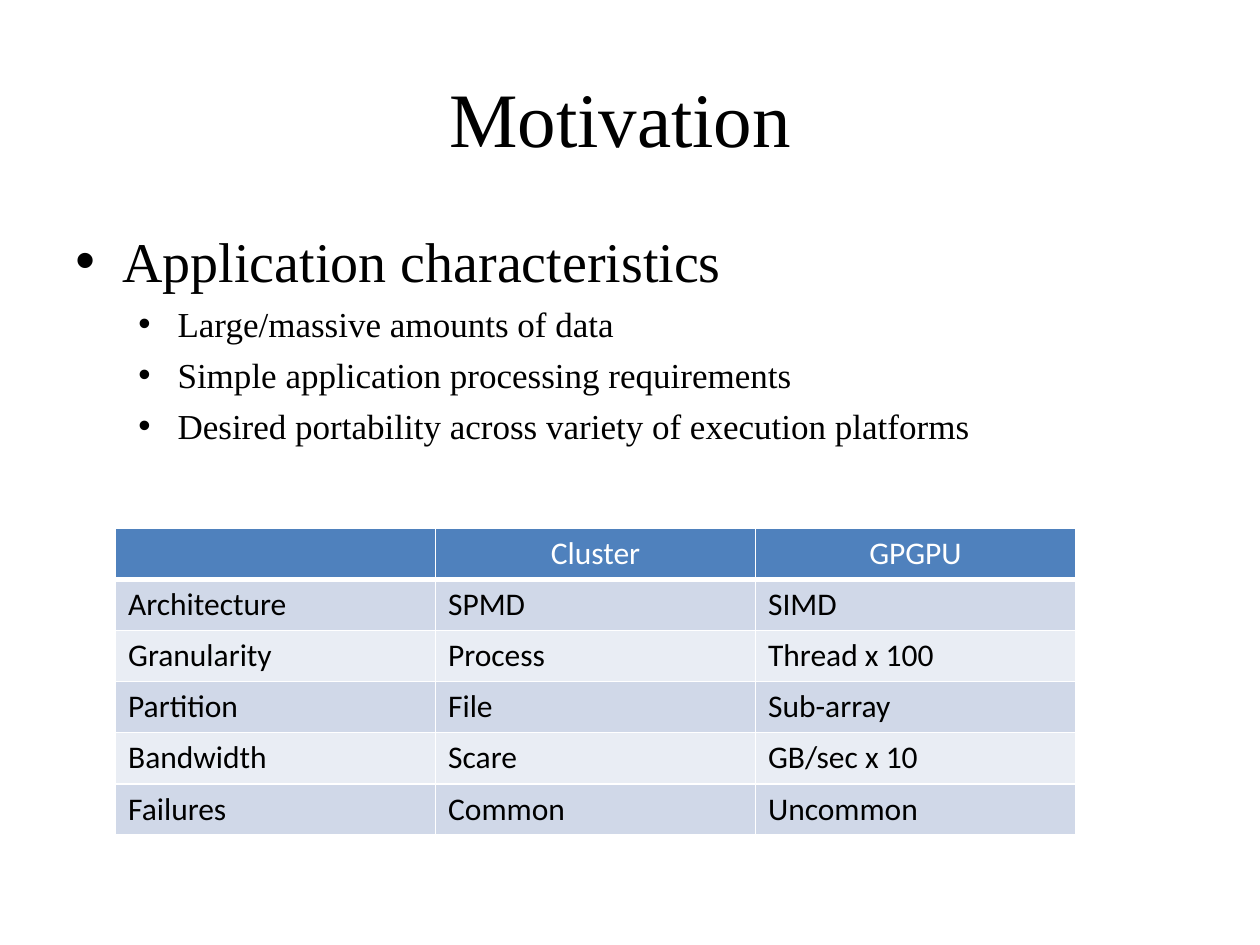
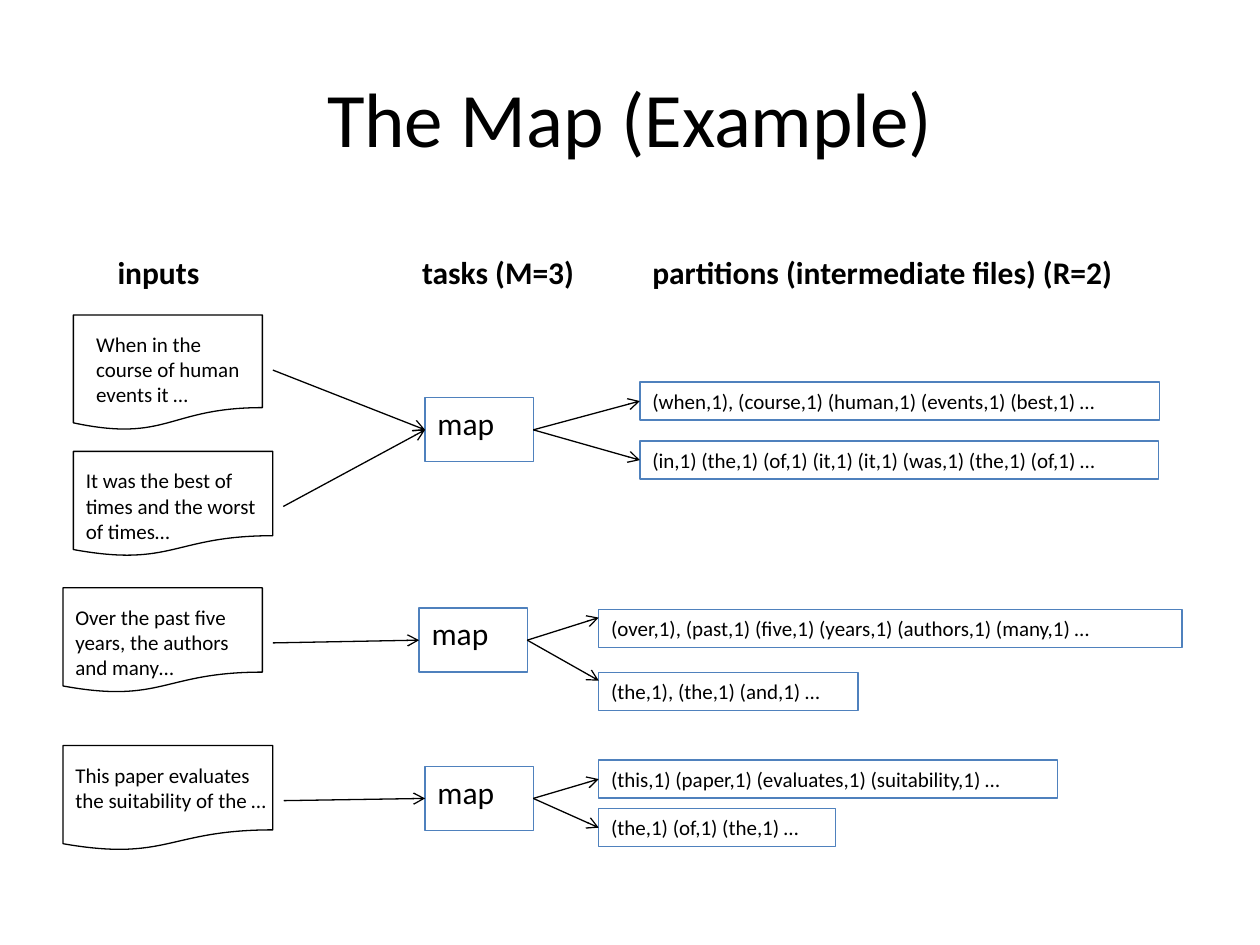
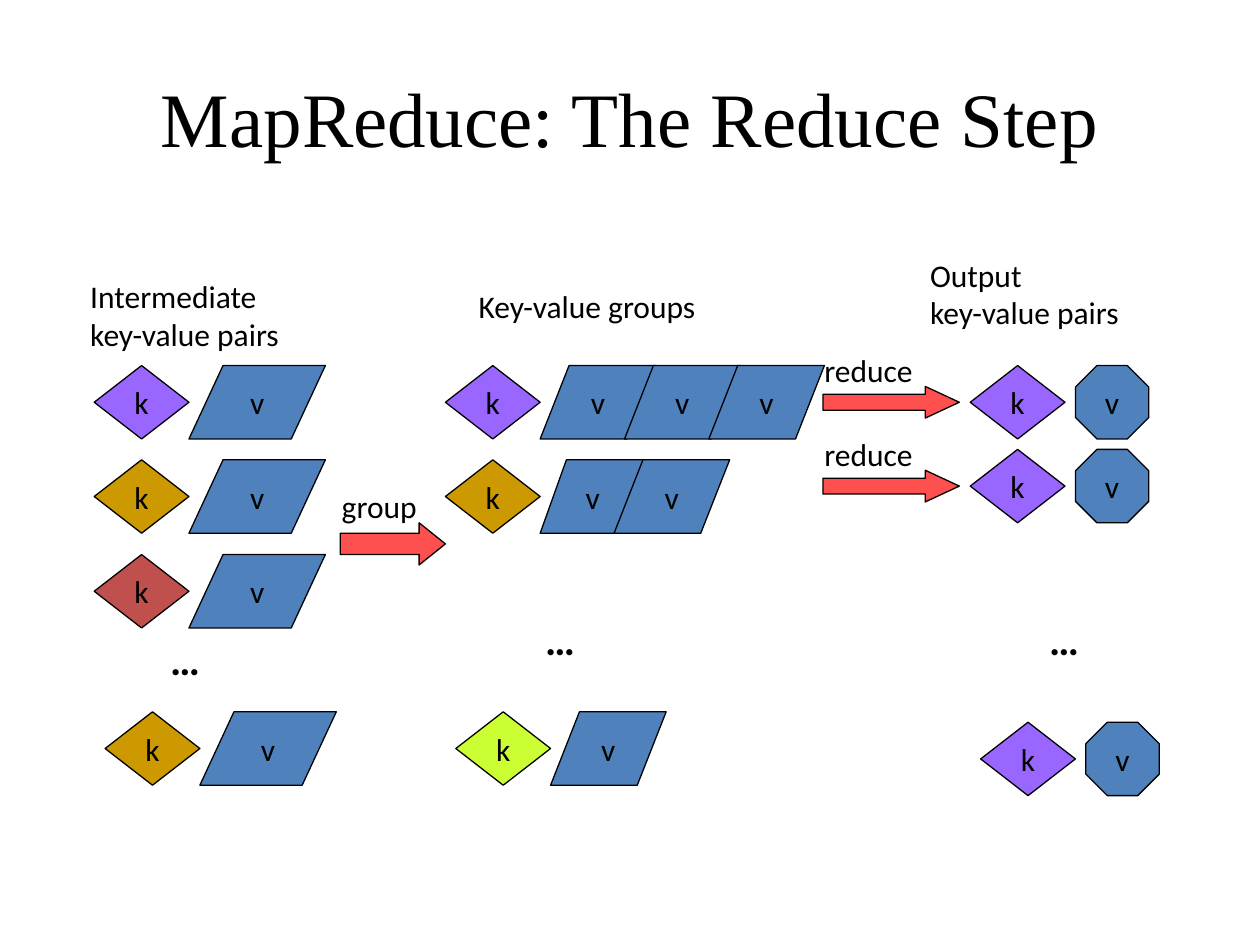
import pptx
import pptx.dml.color
import pptx.enum.shapes
import pptx.enum.text
import pptx.oxml
import pptx.oxml.ns
import pptx.util
from dataclasses import dataclass

Cm = pptx.util.Cm
Pt = pptx.util.Pt
SHAPE = pptx.enum.shapes.MSO_SHAPE
ALIGN = pptx.enum.text.PP_ALIGN
ANCHOR = pptx.enum.text.MSO_ANCHOR
TOP, LEFT, BOTTOM, RIGHT = range(4)


@dataclass(frozen=True)
class Theme:
    sans: str = "Calibri"
    serif: str = "Times New Roman"
    black: str = "000000"
    white: str = "FFFFFF"
    blue: str = "4F81BD"
    band_dark: str = "D0D8E8"
    band_light: str = "E9EDF4"
    purple: str = "9966FF"
    ochre: str = "CC9900"
    brick: str = "C0504D"
    lime: str = "CCFF33"
    red: str = "FF5050"
    title: int = 44
    topic: int = 32
    ellipsis: int = 24
    point: int = 20
    label: int = 18
    data: int = 12
    outline: float = 0.75


THEME = Theme()


def rgb(color):
    return pptx.dml.color.RGBColor.from_string(color)


def xml(markup):
    """Parse one drawing element whose tag carries the {ns} mark."""
    return pptx.oxml.parse_xml(markup.replace("{ns}", pptx.oxml.ns.nsdecls("a")))


def write(frame, text, size=THEME.label, font=THEME.sans, color=THEME.black,
          bold=False, align=ALIGN.LEFT, anchor=ANCHOR.TOP, wrap=True):
    """Fill a text frame, one paragraph for each line of text."""
    frame.word_wrap = wrap
    frame.vertical_anchor = anchor
    frame.text = text
    for paragraph in frame.paragraphs:
        paragraph.alignment = align
        paragraph.font.size = Pt(size)
        for run in paragraph.runs:
            run.font.size = Pt(size)
            run.font.name = font
            run.font.bold = bold
            run.font.color.rgb = rgb(color)


class Deck:
    """Presentation style together with the slide being filled; lengths are in cm."""

    def __init__(self, theme):
        self.theme = theme
        self.presentation = pptx.Presentation()
        self.presentation.slide_width = Cm(25.4)
        self.presentation.slide_height = Cm(19.05)
        self.slide = None

    def new_slide(self, title, font):
        self.slide = self.presentation.slides.add_slide(self.presentation.slide_layouts[6])
        self.text(title, 1.27, 0.76, 22.86, 3.18, size=self.theme.title, font=font,
                  align=ALIGN.CENTER, anchor=ANCHOR.MIDDLE)

    def text(self, text, x, y, width, height=1.03, **text_format):
        box = self.slide.shapes.add_textbox(Cm(x), Cm(y), Cm(width), Cm(height))
        write(box.text_frame, text, **text_format)
        return box

    def shape(self, kind, x, y, width, height, fill=None, line=THEME.black,
              text="", **text_format):
        shape = self.slide.shapes.add_shape(kind, Cm(x), Cm(y), Cm(width), Cm(height))
        shape.shadow.inherit = False
        if fill:
            shape.fill.solid()
            shape.fill.fore_color.rgb = rgb(fill)
        else:
            shape.fill.background()
        shape.line.color.rgb = rgb(line)
        shape.line.width = Pt(self.theme.outline)
        if text:
            write(shape.text_frame, text, **text_format)
        return shape

    def arrow(self, source, target, target_drop=None):
        """Join right side to left side, or end target_drop below the target's top."""
        end_y = target.top + Cm(target_drop or 0)
        arrow = self.slide.shapes.add_connector(
            pptx.enum.shapes.MSO_CONNECTOR.STRAIGHT,
            source.left + source.width, source.top + source.height // 2, target.left, end_y)
        arrow.begin_connect(source, RIGHT)
        if target_drop is None:
            arrow.end_connect(target, LEFT)
        arrow.line.color.rgb = rgb(self.theme.black)
        arrow.line.width = Pt(self.theme.outline)
        properties = arrow.element.spPr
        properties.find(pptx.oxml.ns.qn("a:ln")).append(xml('<a:tailEnd {ns} type="arrow"/>'))
        properties.append(xml("<a:effectLst {ns}/>"))

    def bullets(self, topic, points, x, y, width, height):
        box = self.text("\n".join([topic, *points]), x, y, width, height,
                        size=self.theme.point, font=self.theme.serif)
        for index, paragraph in enumerate(box.text_frame.paragraphs):
            margin, hanging, gap = (2.06, 0.79, 5) if index else (0.95, 0.95, 6.4)
            paragraph.space_before = Pt(gap)
            properties = paragraph._p.get_or_add_pPr()
            properties.set("marL", str(Cm(margin)))
            properties.set("indent", str(-Cm(hanging)))
            properties.append(xml('<a:buFont {ns} typeface="Arial"/>'))
            properties.append(xml('<a:buChar {ns} char="•"/>'))
        box.text_frame.paragraphs[0].font.size = Pt(self.theme.topic)
        box.text_frame.paragraphs[0].runs[0].font.size = Pt(self.theme.topic)

    def table(self, rows, x, y, column_width, row_height):
        theme = self.theme
        table = self.slide.shapes.add_table(
            len(rows), len(rows[0]), Cm(x), Cm(y),
            Cm(column_width * len(rows[0])), Cm(row_height * len(rows))).table
        table.first_row = table.horz_banding = False
        for column in table.columns:
            column.width = Cm(column_width)
        for r, values in enumerate(rows):
            table.rows[r].height = Cm(row_height)
            header = r == 0
            band = theme.band_dark if r % 2 else theme.band_light
            for c, value in enumerate(values):
                cell = table.cell(r, c)
                self.cell_borders(cell, top=3 if r == 1 else 1, bottom=3 if header else 1)
                cell.fill.solid()
                cell.fill.fore_color.rgb = rgb(theme.blue if header else band)
                write(cell.text_frame, value,
                      color=theme.white if header else theme.black,
                      align=ALIGN.CENTER if header else ALIGN.LEFT)

    def cell_borders(self, cell, top, bottom):
        properties = cell._tc.get_or_add_tcPr()
        for side, points in (("L", 1), ("R", 1), ("T", top), ("B", bottom)):
            properties.append(xml(
                f'<a:ln{side} {{ns}} w="{Pt(points)}"><a:solidFill>'
                f'<a:srgbClr val="{self.theme.white}"/></a:solidFill></a:ln{side}>'))

    def symbol(self, kind, letter, x, y, width, fill):
        """Draw a lettered key or value shape."""
        symbol = self.shape(kind, x, y, width, 1.48, fill=fill, text=letter,
                            align=ALIGN.CENTER, anchor=ANCHOR.MIDDLE, wrap=False)
        if kind == SHAPE.PARALLELOGRAM:
            symbol.adjustments[0] = 0.25 * width / 1.48

    def key(self, x, y, fill):
        self.symbol(SHAPE.DIAMOND, "k", x, y, 1.91, fill)

    def value(self, x, y, width, kind=SHAPE.PARALLELOGRAM):
        self.symbol(kind, "v", x, y, width, self.theme.blue)

    def step(self, label, x, y, width, height):
        """Draw a block arrow with its label above."""
        arrow = self.shape(SHAPE.RIGHT_ARROW, x, y, width, height, fill=self.theme.red)
        arrow.adjustments[1] = 0.25 * width / height
        self.text(label, x - 0.22, y - 0.84, 2.67)


def motivation_slide(deck):
    deck.new_slide("Motivation ", THEME.serif)
    deck.bullets("Application characteristics", [
        "Large/massive amounts of data",
        "Simple application processing requirements",
        "Desired portability across variety of execution platforms",
    ], 1.27, 4.45, 22.86, 5)
    deck.table([
        ("", "Cluster", "GPGPU"),
        ("Architecture", "SPMD", "SIMD"),
        ("Granularity", "Process", "Thread x 100"),
        ("Partition", "File", "Sub-array"),
        ("Bandwidth", "Scare", "GB/sec x 10"),
        ("Failures", "Common", "Uncommon"),
    ], 2.33, 10.65, 6.45, 1.03)


# Each task: map position, arrow drop, inputs and partitions.
# An input: text, document x, y, width, height, then text x and width.
# A partition: text, x, y, width.
MAP_TASKS = [
    ((8.57, 8.02), None,
     [("When in the course of human events it …", 1.48, 6.35, 3.81, 2.33, 1.69, 3.81),
      ("It was the best of times and the worst of times…", 1.48, 9.1, 4.02, 2.12, 1.48, 4.23)],
     [("(when,1), (course,1) (human,1) (events,1) (best,1) …", 12.9, 7.7, 10.47),
      ("(in,1) (the,1) (of,1) (it,1) (it,1) (was,1) (the,1) (of,1) …", 12.9, 8.89, 10.45)]),
    ((8.45, 12.26), 0.16,
     [("Over the past five years, the authors and many…", 1.27, 11.85, 4.02, 2.12, 1.27, 4.23)],
     [("(over,1), (past,1) (five,1) (years,1) (authors,1) (many,1) …", 12.07, 12.29, 11.76),
      ("(the,1), (the,1) (and,1) …", 12.07, 13.56, 5.23)]),
    ((8.57, 15.45), None,
     [("This paper evaluates the suitability of the …", 1.27, 15.03, 4.23, 2.12, 1.27, 4.45)],
     [("(this,1) (paper,1) (evaluates,1) (suitability,1) …", 12.07, 15.32, 9.25),
      ("(the,1) (of,1) (the,1) …", 12.07, 16.3, 4.78)]),
]


def map_slide(deck):
    deck.new_slide("The Map (Example)", THEME.sans)
    for heading, x, width in (("inputs", 2.12, 2.44), ("tasks (M=3)", 8.26, 4.14),
                              ("partitions (intermediate files) (R=2)", 12.9, 11.15)):
        deck.text(heading, x, 4.98, width, bold=True)
    for (task_x, task_y), drop, inputs, partitions in MAP_TASKS:
        task = deck.shape(SHAPE.RECTANGLE, task_x, task_y, 2.18, 1.29,
                          line=THEME.blue, text="map")
        for words, x, y, width, height, words_x, words_width in inputs:
            passage = deck.text(words, words_x, y + 0.21, words_width, 1.8, size=THEME.data)
            deck.shape(SHAPE.FLOWCHART_DOCUMENT, x, y, width, height)
            deck.arrow(passage, task)
        for pairs, x, y, width in partitions:
            partition = deck.shape(SHAPE.RECTANGLE, x, y, width, 0.77, line=THEME.blue,
                                   text=pairs, size=THEME.data)
            deck.arrow(task, partition, drop)


def reduce_slide(deck):
    deck.new_slide("MapReduce: The Reduce Step", THEME.serif)
    first, second, third, last = 7.37, 9.27, 11.18, 14.35

    for caption, x, y, width, height in (
            ("Intermediate\nkey-value pairs", 1.57, 5.46, 5.41, 1.79),
            ("Key-value groups", 9.4, 5.66, 6.55, 1.03),
            ("Output\nkey-value pairs", 18.5, 5.03, 5.72, 1.79)):
        deck.text(caption, x, y, width, height)
    for x, y in ((3.18, 12.65), (10.74, 12.24), (20.9, 12.24)):
        deck.text("…", x, y, 1.4, 1.27, size=THEME.ellipsis, bold=True)

    for x, y, fill in ((1.9, first, THEME.purple), (1.9, second, THEME.ochre),
                       (1.9, third, THEME.brick), (2.12, last, THEME.ochre)):
        deck.key(x, y, fill)
        deck.value(x + 1.91, y, 2.75)

    for x, y, fill, pitch, widths in (
            (8.98, first, THEME.purple, 1.7, (2.33, 2.33, 2.33)),
            (8.98, second, THEME.ochre, 1.49, (2.12, 2.33)),
            (9.19, last, THEME.lime, 0, (2.33,))):
        deck.key(x, y, fill)
        for index, width in enumerate(widths):
            deck.value(x + 1.91 + index * pitch, y, width)

    for x, y in ((19.56, first), (19.56, 9.06), (19.77, 14.56)):
        deck.key(x, y, THEME.purple)
        deck.value(x + 2.12, y, 1.48, SHAPE.OCTAGON)

    deck.step("group", 6.86, 10.54, 2.12, 0.85)
    for y in (7.79, 9.48):
        deck.step("reduce", 16.59, y, 2.75, 0.64)


def main():
    deck = Deck(THEME)
    motivation_slide(deck)
    map_slide(deck)
    reduce_slide(deck)
    deck.presentation.save("out.pptx")


if __name__ == "__main__":
    main()
